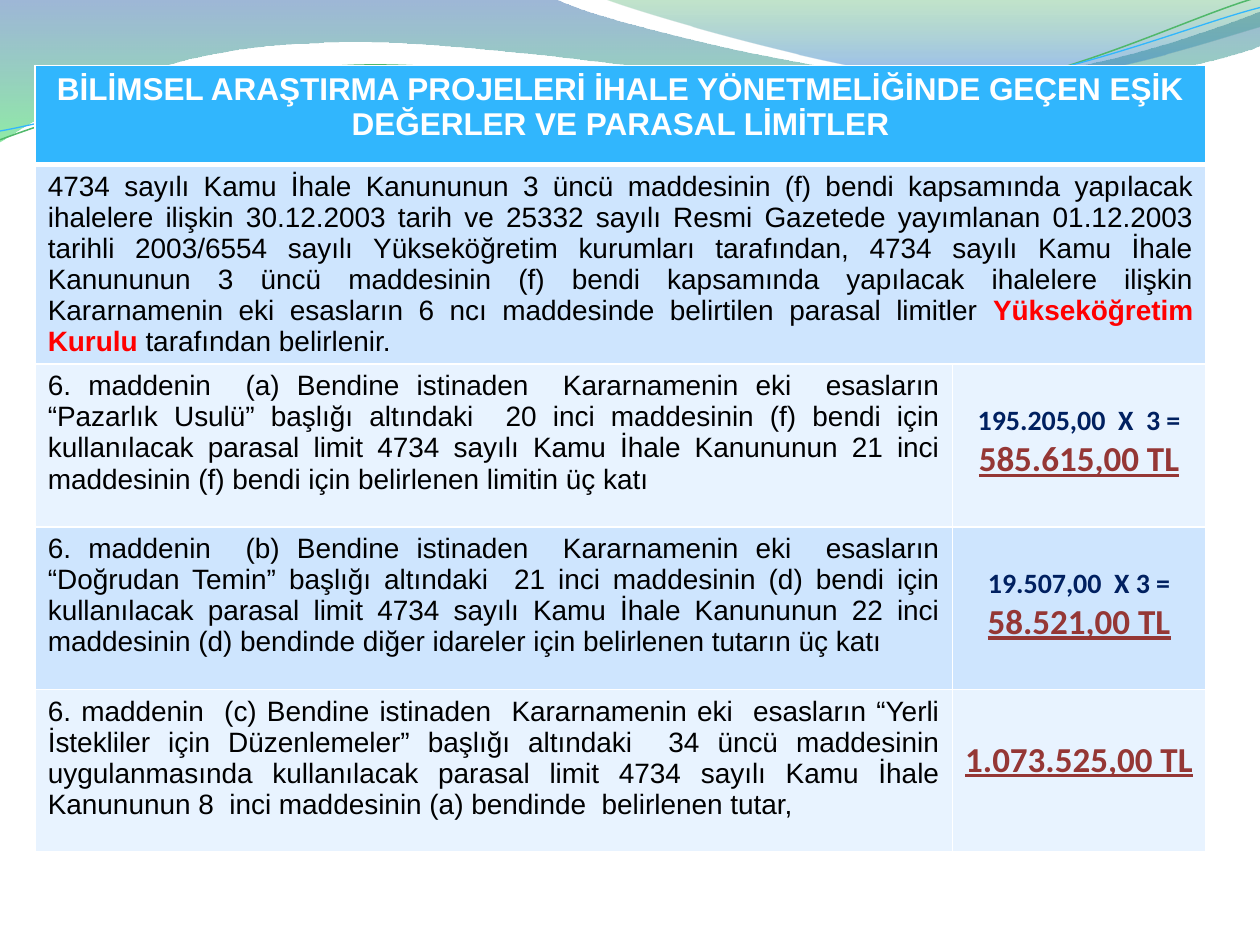
from lxml.etree import SubElement
from pptx import Presentation
from pptx.dml.color import RGBColor as RGB
from pptx.enum.text import PP_ALIGN as Al
from pptx.oxml import parse_xml
from pptx.oxml.ns import nsdecls, qn
from pptx.util import Cm, Pt

THEME = {
    "body_font": "Arial", "sum_font": "Calibri",
    "title": 18, "body": 16, "sum": 20,
    "white": "FFFFFF", "black": "000000", "red": "FF0000", "navy": "002060", "brown": "953735",
    "header": "31B6FD", "band": ("CEE5FE", "E8F3FF"),
    "wave_left": (("2960A7", 0, 45), ("35DA5E", 1, 55)),
    "wave_right": (("36A752", 0, 30), ("2472D3", 0.8, 45)),
    "green_line": ("50B86A", 0.85), "blue_line": ("31B6FD", 0.75),
}
STYLES = {
    "title": ("body_font", "title", "white", True, False),
    "body": ("body_font", "body", "black", False, False),
    "strong": ("body_font", "body", "red", True, False),
    "factor": ("sum_font", "body", "navy", True, False),
    "total": ("sum_font", "sum", "brown", True, True),
}
TITLE = [("title", "BİLİMSEL ARAŞTIRMA PROJELERİ İHALE YÖNETMELİĞİNDE GEÇEN EŞİK DEĞERLER VE PARASAL LİMİTLER")]
INTRO = [
    ("body", "4734 sayılı Kamu İhale Kanununun 3 üncü maddesinin (f) bendi kapsamında yapılacak ihalelere "
             "ilişkin 30.12.2003 tarih ve 25332 sayılı Resmi Gazetede yayımlanan 01.12.2003 tarihli 2003/6554 "
             "sayılı Yükseköğretim kurumları tarafından, 4734 sayılı Kamu İhale Kanununun 3 üncü maddesinin (f) "
             "bendi kapsamında yapılacak ihalelere ilişkin Kararnamenin eki esasların 6 ncı maddesinde "
             "belirtilen parasal limitler "),
    ("strong", "Yükseköğretim Kurulu"),
    ("body", " tarafından belirlenir."),
]
LIMITS = [
    ("6. maddenin  (a) Bendine istinaden  Kararnamenin eki  esasların “Pazarlık Usulü” başlığı altındaki  "
     "20 inci maddesinin (f) bendi için kullanılacak parasal limit 4734 sayılı Kamu İhale Kanununun 21 inci "
     "maddesinin (f) bendi için belirlenen limitin üç katı",
     [("factor", "195.205,00  X  3 = "), ("total", "585.615,00 TL")], 0.81),
    ("6. maddenin  (b) Bendine istinaden  Kararnamenin eki  esasların “Doğrudan Temin” başlığı altındaki  "
     "21 inci maddesinin (d) bendi için kullanılacak parasal limit 4734 sayılı Kamu İhale Kanununun 22 inci "
     "maddesinin (d) bendinde diğer idareler için belirlenen tutarın üç katı",
     [("factor", "19.507,00  X 3 = "), ("total", "58.521,00 TL")], 0.81),
    ("6. maddenin  (c) Bendine istinaden  Kararnamenin eki  esasların “Yerli İstekliler için Düzenlemeler” "
     "başlığı altındaki  34 üncü maddesinin uygulanmasında kullanılacak parasal limit 4734 sayılı Kamu İhale "
     "Kanununun 8  inci maddesinin (a) bendinde  belirlenen tutar,",
     [("total", "1.073.525,00 TL")], 0.99),
]
UNIT = Cm(0.0254)
COLS, ROWS = (18.49, 5.11), (2.0, 4.01, 3.28, 3.28, 3.28)
WAVES = [
    ("wave_left", "LCCLCCC", [
        (0, 0), (440, -1), (476, 17), (664, 63), (758, 63), (853, 63), (958, 26), (1000, 9), (1001, 36),
        (983, 44), (870, 76), (746, 75), (622, 75), (382, 28), (257, 34), (129, 36), (46, 83), (-1, 113)]),
    ("wave_right", "CCL", [
        (479, -1), (509, 11), (682, 62), (769, 65), (856, 69), (961, 32), (1000, 21), (1000, 0)]),
    ("green_line", "CCC", [
        (0, 111), (48, 93), (158, 57), (277, 52), (395, 47), (593, 89), (713, 80), (833, 71), (938, 15), (998, -2)]),
    ("blue_line", "CCC", [
        (0, 104), (47, 96), (164, 61), (283, 56), (403, 51), (597, 84), (717, 75), (836, 67), (941, 21), (1000, 6)]),
]


def bend(sp, kinds):
    """Turn each marked group of three line segments into one curve."""
    segments = iter(list(sp._element.iter(qn("a:lnTo"))))
    for kind in kinds:
        seg = next(segments)
        if kind == "C":
            seg.tag = qn("a:cubicBezTo")
            for other in (next(segments), next(segments)):
                seg.append(other[0])
                other.getparent().remove(other)


def add_wave(s, style, kinds, points):
    """Draw a translucent wave or a thin curved line."""
    filled = style.startswith("wave")
    fb = s.shapes.build_freeform(*points[0], scale=UNIT)
    fb.add_line_segments(points[1:], close=filled)
    sp = fb.convert_to_shape()
    sp.shadow.inherit = False
    bend(sp, kinds)
    if not filled:
        color, width = THEME[style]
        sp.fill.background()
        sp.line.color.rgb = RGB.from_string(color)
        sp.line.width = Pt(width)
        return
    sp.line.fill.background()
    sp.fill.gradient()
    sp.fill.gradient_angle = 270
    for stop, (color, position, _) in zip(sp.fill.gradient_stops, THEME[style]):
        stop.color.rgb = RGB.from_string(color)
        stop.position = position
    for clr, (_, _, opacity) in zip(sp._element.spPr.iter(qn("a:srgbClr")), THEME[style]):
        SubElement(clr, qn("a:alpha")).set("val", str(opacity * 1000))


def set_borders(cell, top, bottom):
    """Give a cell white borders of the given widths."""
    tcPr = cell._tc.get_or_add_tcPr()
    for i, (side, width) in enumerate((("L", 1), ("R", 1), ("T", top), ("B", bottom))):
        tcPr.insert(i, parse_xml(
            f'<a:ln{side} {nsdecls("a")} w="{Pt(width)}"><a:solidFill>'
            f'<a:srgbClr val="{THEME["white"]}"/></a:solidFill></a:ln{side}>'))


def write(cell, runs, align, margin=0.13):
    """Write styled runs into a cell as one paragraph."""
    cell.margin_top = Cm(margin)
    p = cell.text_frame.paragraphs[0]
    p.alignment = align
    for style, text in runs:
        font, size, color, bold, underline = STYLES[style]
        r = p.add_run()
        r.text = text
        r.font.name = THEME[font]
        r.font.size = Pt(THEME[size])
        r.font.color.rgb = RGB.from_string(THEME[color])
        r.font.bold, r.font.underline = bold, underline


def add_limits_table(s):
    """Build the table of monetary limits."""
    table = s.shapes.add_table(
        len(ROWS), len(COLS), Cm(0.71), Cm(1.32), Cm(sum(COLS)), Cm(sum(ROWS))).table
    table.first_row = table.horz_banding = False
    for col, width in zip(table.columns, COLS):
        col.width = Cm(width)
    for i, height in enumerate(ROWS):
        table.rows[i].height = Cm(height)
        for j in range(len(COLS)):
            cell = table.cell(i, j)
            cell.fill.solid()
            cell.fill.fore_color.rgb = RGB.from_string(THEME["band"][(i - 1) % 2] if i else THEME["header"])
            set_borders(cell, 3 if i == 1 else 1, 3 if i == 0 else 1)
    for i, (runs, align) in enumerate(((TITLE, Al.CENTER), (INTRO, Al.JUSTIFY))):
        table.cell(i, 0).merge(table.cell(i, 1))
        write(table.cell(i, 0), runs, align)
    for i, (text, amount, margin) in enumerate(LIMITS, 2):
        write(table.cell(i, 0), [("body", text)], Al.JUSTIFY)
        write(table.cell(i, 1), amount, Al.CENTER, margin)


def main():
    """Build and save the slide."""
    prs = Presentation()
    prs.slide_width, prs.slide_height = Cm(25.4), Cm(19.05)
    s = prs.slides.add_slide(prs.slide_layouts[6])
    for wave in WAVES:
        add_wave(s, *wave)
    add_limits_table(s)
    prs.save("out.pptx")


if __name__ == "__main__":
    main()
